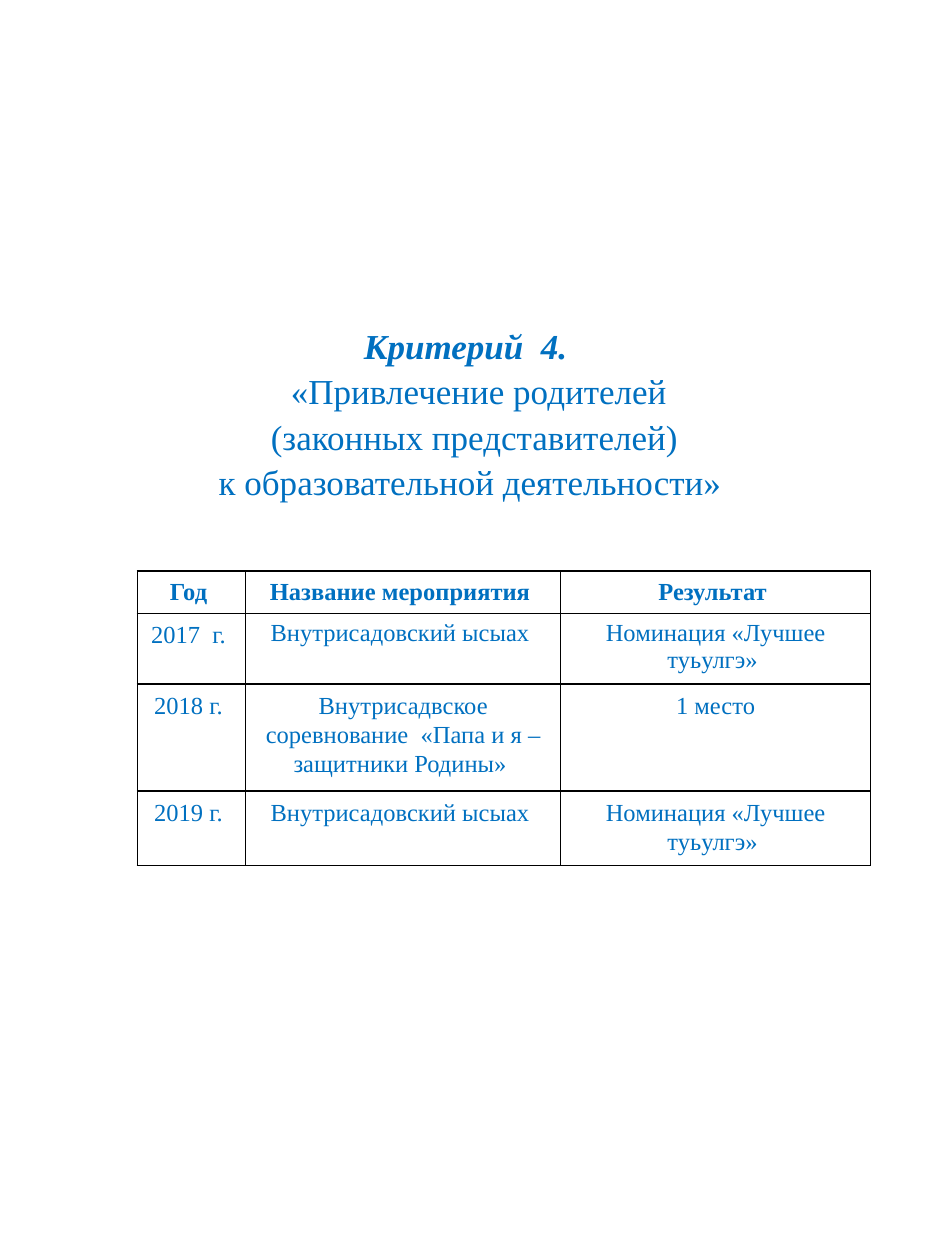
from lxml.etree import SubElement
from pptx import Presentation
from pptx.dml.color import RGBColor
from pptx.enum.text import MSO_ANCHOR, MSO_AUTO_SIZE, PP_ALIGN
from pptx.oxml.ns import qn
from pptx.util import Inches, Pt

BLUE = RGBColor(0x00, 0x70, 0xC0)
BLACK = RGBColor(0x00, 0x00, 0x00)
FONT = "Times New Roman"

HEADING = "Критерий  4.  "
TITLE_LINES = [
    " «Привлечение родителей",
    " (законных представителей) ",
    "к образовательной деятельности» ",
]
TABLE_ROWS = [
    ("Год ", "Название мероприятия ", "Результат "),
    ("2017  г. ", "Внутрисадовский ысыах ", "Номинация «Лучшее туьулгэ» "),
    ("2018 г. ", "Внутрисадвское соревнование  «Папа и я – защитники Родины» ", " 1 место "),
    ("2019 г. ", "Внутрисадовский ысыах ", "Номинация «Лучшее туьулгэ» "),
]
COLUMN_WIDTHS = [0.86, 2.5, 2.46]
ROW_HEIGHTS = [0.34, 0.56, 0.85, 0.59]
TIGHT_ROW = 1  # events of this row are set in single line spacing

TITLE_BOX = {"left": 0.39, "top": 2.5, "width": 6.75, "height": 1.45}
TABLE_LEFT, TABLE_TOP = 1.09, 4.53
CELL_MARGINS = {"margin_left": 0.09, "margin_right": 0.09,
                "margin_top": 0.05, "margin_bottom": 0.05}


def set_values(target, values):
    for name, value in values.items():
        setattr(target, name, value)


def add_text(paragraph, text, size, bold=False, italic=False):
    run = paragraph.add_run()
    run.text = text
    set_values(run.font, {"name": FONT, "size": Pt(size), "bold": bold, "italic": italic})
    run.font.color.rgb = BLUE


def add_borders(cell):
    properties = cell._tc.get_or_add_tcPr()
    for position, side in enumerate(("lnL", "lnR", "lnT", "lnB")):
        line = SubElement(properties, qn(f"a:{side}"), w=str(Pt(1)))
        fill = SubElement(line, qn("a:solidFill"))
        SubElement(fill, qn("a:srgbClr"), val=str(BLACK))
        properties.remove(line)
        properties.insert(position, line)


def add_title(slide):
    title = slide.shapes.title
    set_values(title, {name: Inches(value) for name, value in TITLE_BOX.items()})
    frame = title.text_frame
    set_values(frame, {"word_wrap": True, "auto_size": MSO_AUTO_SIZE.NONE,
                       "vertical_anchor": MSO_ANCHOR.TOP})
    for index, text in enumerate(TITLE_LINES):
        paragraph = frame.add_paragraph() if index else frame.paragraphs[0]
        set_values(paragraph, {"alignment": PP_ALIGN.CENTER, "line_spacing": 1.08,
                               "space_before": Pt(0)})
        if index == 0:
            add_text(paragraph, HEADING, 20, bold=True, italic=True)
            paragraph.add_line_break()
        add_text(paragraph, text, 20)


def add_events_table(slide):
    table = slide.shapes.add_table(
        len(TABLE_ROWS), len(COLUMN_WIDTHS), Inches(TABLE_LEFT), Inches(TABLE_TOP),
        Inches(sum(COLUMN_WIDTHS)), Inches(sum(ROW_HEIGHTS))).table
    set_values(table, {"first_row": False, "horz_banding": False})
    for column, width in zip(table.columns, COLUMN_WIDTHS):
        column.width = Inches(width)
    for row, height in zip(table.rows, ROW_HEIGHTS):
        row.height = Inches(height)
    for r, texts in enumerate(TABLE_ROWS):
        for c, text in enumerate(texts):
            cell = table.cell(r, c)
            set_values(cell, {name: Inches(value) for name, value in CELL_MARGINS.items()})
            cell.fill.background()
            add_borders(cell)
            paragraph = cell.text_frame.paragraphs[0]
            set_values(paragraph, {
                "alignment": PP_ALIGN.CENTER,
                "line_spacing": 1.0 if r == TIGHT_ROW and c else 1.07,
                "space_after": Pt(8 if r == 0 or c == 0 else 0),
            })
            add_text(paragraph, text, 14, bold=r == 0)


def main():
    presentation = Presentation()
    set_values(presentation, {"slide_width": Inches(7.5), "slide_height": Inches(10)})
    slide = presentation.slides.add_slide(presentation.slide_layouts[5])
    add_title(slide)
    add_events_table(slide)
    presentation.save("out.pptx")


if __name__ == "__main__":
    main()
